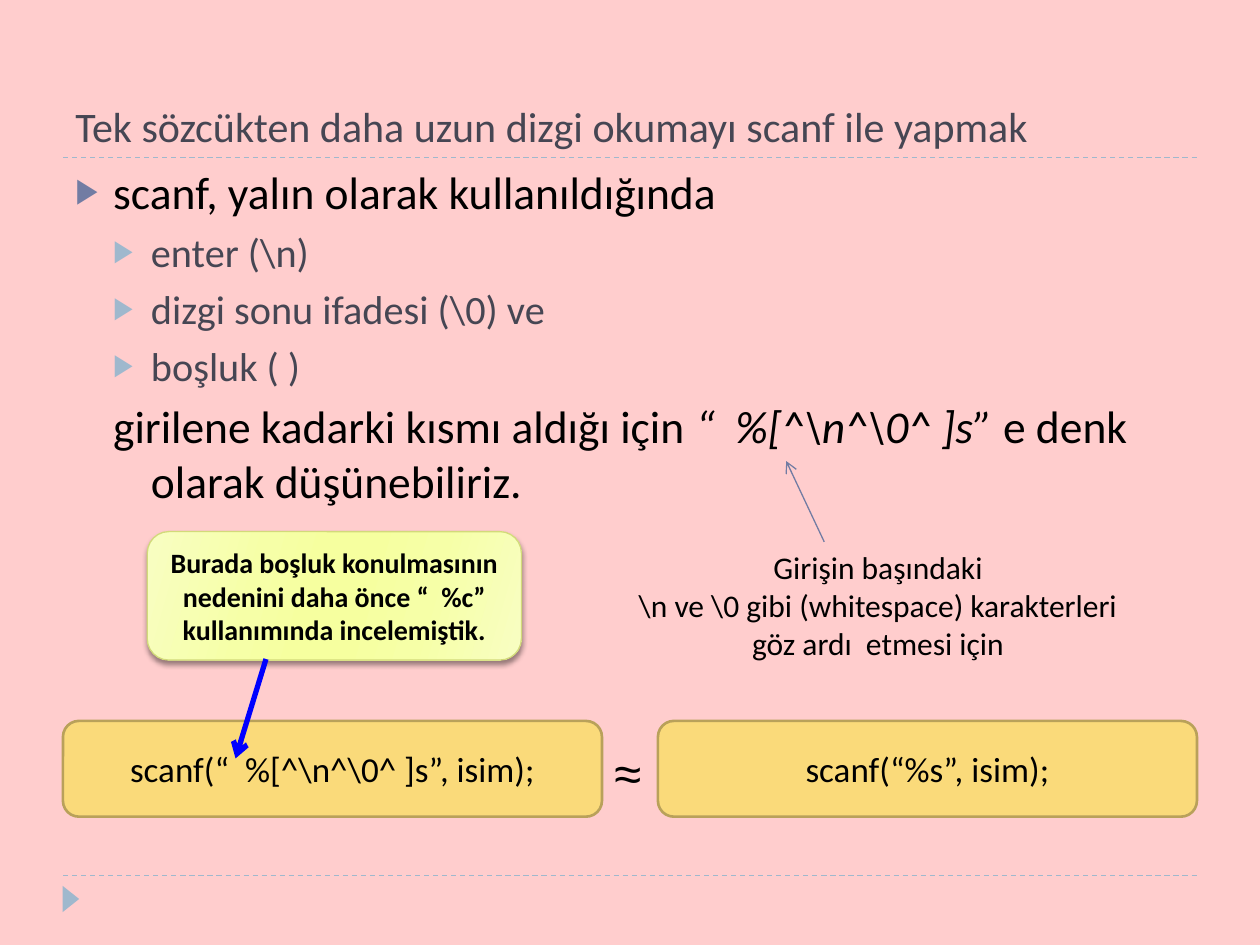
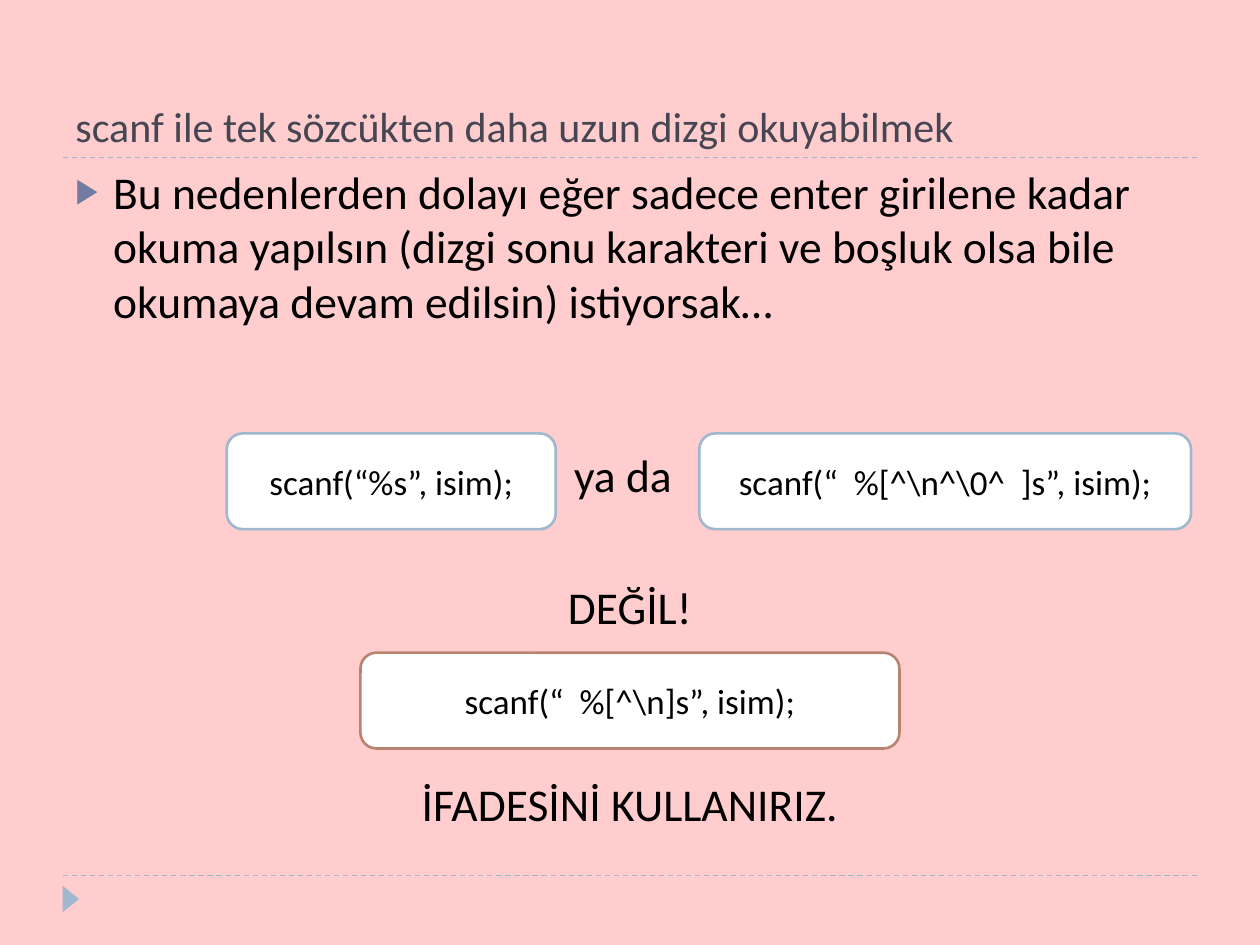
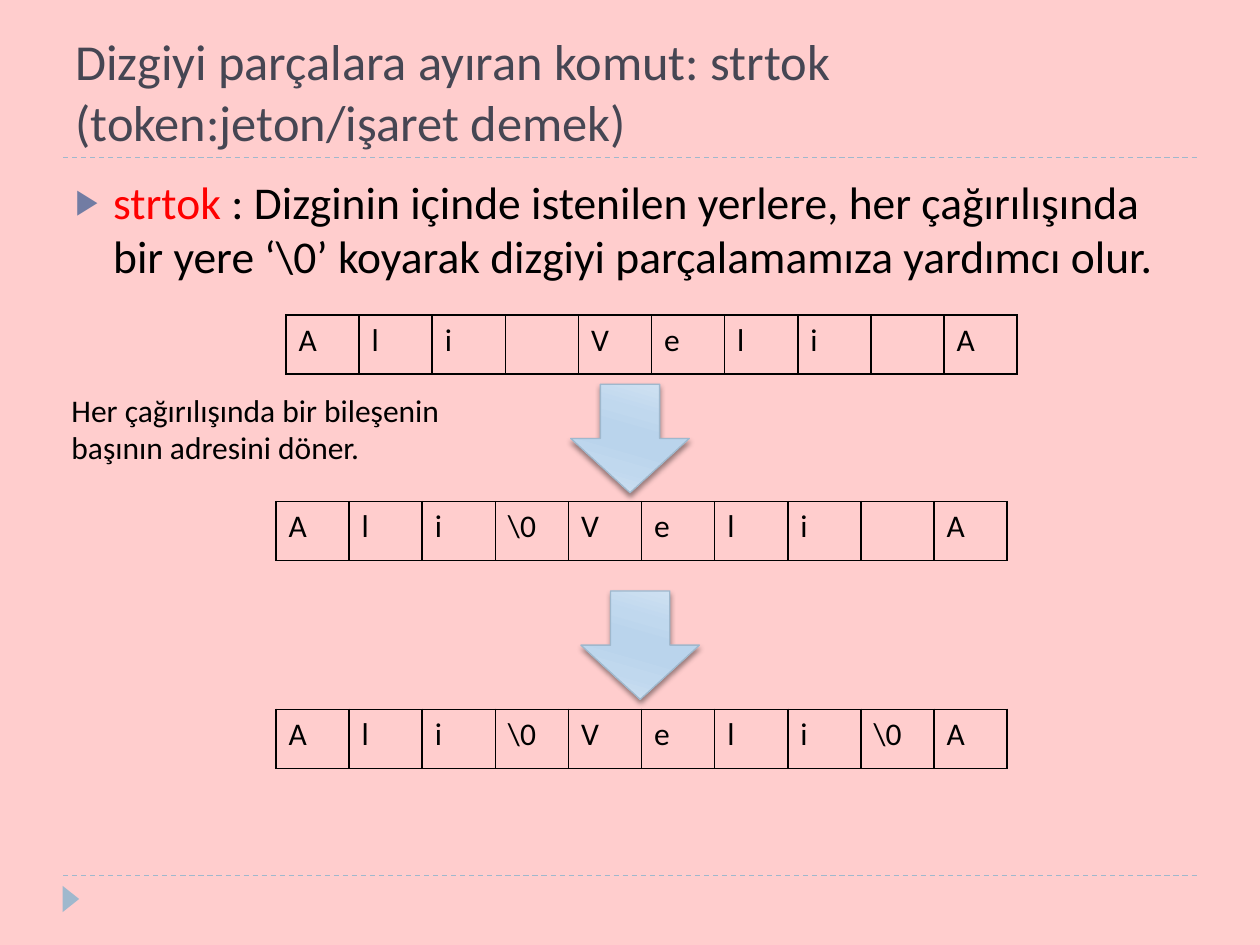
from dataclasses import dataclass

from lxml import etree
from pptx import Presentation, util as u
from pptx.dml.color import RGBColor
from pptx.enum import dml, shapes, text
from pptx.oxml.ns import qn

Pt = u.Pt
LEFT, MID = text.PP_ALIGN.LEFT, text.PP_ALIGN.CENTER
KIND = shapes.MSO_SHAPE


@dataclass(frozen=True)
class Theme:
    face: str = "Calibri"
    sign: str = "Arial"
    back: str = "FFCDCD"
    ink: str = "000000"
    grey: str = "464653"
    slate: str = "727CA3"
    sky: str = "9FB8CD"
    red: str = "FF0000"
    blue: str = "0000FF"
    white: str = "FFFFFF"
    gold: str = "FADA7A"
    rim: str = "B9A15A"
    clay: str = "B88472"
    lime: str = "D2DA7A"
    limes: tuple = ("F8FEC2", "F6FFA7", "F6FF9F")
    skies: tuple = ("D3E3F2", "C0D8EE", "BAD4EC")
    head: float = 24
    big: float = 28.8
    main: float = 26
    minor: float = 23
    code: float = 20
    note: float = 18
    small: float = 16
    equal: float = 28


T = Theme()

# Body lines: (style, runs); a run is text or (text, changes)
SCANF = [
    ("top", ["scanf, yalın olarak kullanıldığında"]),
    ("sub", ["enter (\\n)"]),
    ("sub", ["dizgi sonu ifadesi (\\0) ve"]),
    ("sub", ["boşluk ( )"]),
    ("rest", ["girilene kadarki kısmı aldığı için ",
              ("“  %[^\\n^\\0^ ]s” ", {"italic": True}),
              "e denk olarak düşünebiliriz."]),
]
ENTER = [("top", ["Bu nedenlerden dolayı eğer sadece enter girilene kadar okuma "
                  "yapılsın (dizgi sonu karakteri ve boşluk olsa bile okumaya "
                  "devam edilsin) istiyorsak…"])]
STRTOK = [("top", [("strtok ", {"color": T.red}),
                   ": Dizginin içinde istenilen yerlere, her çağırılışında bir "
                   "yere ‘\\0’ koyarak dizgiyi parçalamamıza yardımcı olur."])]
NOTE = ["Girişin başındaki", "\\n ve \\0 gibi (whitespace) karakterleri",
        "göz ardı  etmesi için"]
HINT = ("Burada boşluk konulmasının nedenini daha önce “  %c” "
        "kullanımında incelemiştik.")
RETURN = "Her çağırılışında bir bileşenin başının adresini döner."

# Code boxes: left, top, width, fill, line, text
EQUAL = [
    (36, 412, 308, T.gold, T.rim, "scanf(“  %[^\\n^\\0^ ]s”, isim);"),
    (376, 412, 308, T.gold, T.rim, "scanf(“%s”, isim);"),
]
CHOICE = [
    (399.6, 247.7, 281, T.white, T.sky, "scanf(“  %[^\\n^\\0^  ]s”, isim);"),
    (129.6, 247.7, 188, T.white, T.sky, "scanf(“%s”, isim);"),
    (206, 373, 308, T.white, T.clay, "scanf(“  %[^\\n]s”, isim);"),
]
# Phrases: centre, top, text
VERDICT = [(356, 252, "ya da"), (360, 327.5, "DEĞİL!"),
           (360, 440, "İFADESİNİ KULLANIRIZ.")]

# Strips: left, top, the two gaps between the words
WORDS = ("Ali", "Veli", "A")
STRIPS = [(163.4, 180, ("", "")), (157.7, 286.6, ("\\0", "")),
          (157.7, 405.4, ("\\0", "\\0"))]
ARROWS = [(329, 216.7), (334.8, 334.8)]

# Line styles: indent, space before, bullet colour, size, text colour
STYLES = {
    "top": (21.6, 6, T.slate, T.main, T.ink),
    "sub": (43.2, 5, T.sky, T.minor, T.grey),
    "rest": (43.2, 5, None, T.main, T.ink),
}


def rgb(hue):
    return RGBColor.from_string(hue)


def sub(node, tag, **attrs):
    return etree.SubElement(node, qn(tag), {k: str(v) for k, v in attrs.items()})


def place(box):
    return [Pt(n) for n in box]


def style(font, size, color=T.ink, face=T.face, bold=None):
    font.size, font.name, font.bold = Pt(size), face, bold
    font.color.rgb = rgb(color)


def write(frame, lines, size, align=LEFT, anchor=text.MSO_ANCHOR.TOP, **look):
    frame.word_wrap = True
    frame.vertical_anchor = anchor
    for i, line in enumerate(lines):
        para = frame.add_paragraph() if i else frame.paragraphs[0]
        para.text, para.alignment = line, align
        style(para.font, size, **look)


def label(slide, box, lines, size, **look):
    frame = slide.shapes.add_textbox(*place(box)).text_frame
    write(frame, lines, size, **look)


def body(slide, lines, top=90):
    frame = slide.shapes.add_textbox(*place((36, top, 648, 389))).text_frame
    frame.word_wrap = True
    for i, (name, runs) in enumerate(lines):
        para = frame.add_paragraph() if i else frame.paragraphs[0]
        indent, space, mark, size, color = STYLES[name]
        props = para._p.get_or_add_pPr()
        props.set("marL", str(Pt(indent)))
        props.set("indent", str(-Pt(21.6)))
        if mark:
            sub(sub(props, "a:buClr"), "a:srgbClr", val=mark)
            sub(props, "a:buSzPct", val=76000)
            sub(props, "a:buFont", typeface=T.sign)
            sub(props, "a:buChar", char="▶")
        else:
            sub(props, "a:buNone")
        para.space_before = Pt(space)
        style(para.font, size, color)
        for part in runs:
            words, change = (part, {}) if isinstance(part, str) else part
            run = para.add_run()
            run.text = words
            if "italic" in change:
                run.font.italic = True
            if "color" in change:
                run.font.color.rgb = rgb(change["color"])


def shape(slide, kind, box, fill, edge=None, width=0.75, turn=0):
    form = slide.shapes.add_shape(kind, *place(box))
    form.shadow.inherit = False
    form.rotation = turn
    if isinstance(fill, tuple):
        glow(form, fill)
    else:
        form.fill.solid()
        form.fill.fore_color.rgb = rgb(fill)
    if edge:
        form.line.color.rgb = rgb(edge)
        form.line.width = Pt(width)
    else:
        form.line.fill.background()
    return form


def glow(form, hues):
    """Give a mirrored gradient and a soft shadow below."""
    form.fill.gradient()
    form.fill.gradient_angle = 344
    props = form._element.spPr
    stops = props.find(".//" + qn("a:gsLst"))
    for stop in list(stops):
        stops.remove(stop)
    for spot, hue in zip((0, 30, 45, 55, 73, 100), hues + hues[::-1]):
        sub(sub(stops, "a:gs", pos=spot * 1000), "a:srgbClr", val=hue)
    cast = sub(props.find(qn("a:effectLst")), "a:outerShdw", blurRad=Pt(3),
               dist=Pt(2), dir=5400000, rotWithShape=0)
    sub(sub(cast, "a:srgbClr", val=T.ink), "a:alpha", val=40000)


def line(slide, ends, color, width=0.75, dash=False, arrow=False):
    link = slide.shapes.add_connector(shapes.MSO_CONNECTOR.STRAIGHT, *place(ends))
    link.line.color.rgb = rgb(color)
    link.line.width = Pt(width)
    if dash:
        link.line.dash_style = dml.MSO_LINE.DASH
    if arrow:
        sub(link.line._get_or_add_ln(), "a:tailEnd", type="arrow")
    sub(link._element.spPr, "a:effectLst")


def codes(slide, items):
    for left, top, width, fill, edge, words in items:
        form = shape(slide, KIND.ROUNDED_RECTANGLE, (left, top, width, 54.7),
                     fill, edge, 1.5)
        write(form.text_frame, [words], T.code, MID, text.MSO_ANCHOR.MIDDLE)


def strip(slide, left, top, gaps):
    """Draw the words letter by letter in one row of cells."""
    cells = [*WORDS[0], gaps[0], *WORDS[1], gaps[1], *WORDS[2]]
    box = place((left, top, 41.8 * len(cells), 33.8))
    grid = slide.shapes.add_table(1, len(cells), *box).table
    grid.first_row = grid.horz_banding = False
    for cell, words in zip(grid.iter_cells(), cells):
        props = cell._tc.get_or_add_tcPr()
        for side in "LRTB":
            edge = sub(props, "a:ln" + side, w=Pt(1))
            sub(sub(edge, "a:solidFill"), "a:srgbClr", val=T.ink)
        cell.fill.background()
        para = cell.text_frame.paragraphs[0]
        para.text = words
        style(para.font, T.note)


def start(deck, title, size=T.head):
    slide = deck.slides.add_slide(deck.slide_layouts[6])
    slide.background.fill.solid()
    slide.background.fill.fore_color.rgb = rgb(T.back)
    for y in (500.4, 90):
        line(slide, (36, y, 684, y), T.sky, dash=True)
    shape(slide, KIND.ISOSCELES_TRIANGLE, (33, 509, 15, 9.4), T.sky, turn=90)
    label(slide, (36, 12, 648, 78), [title], size, color=T.grey,
          anchor=text.MSO_ANCHOR.BOTTOM)
    return slide


def main():
    deck = Presentation()
    deck.slide_width, deck.slide_height = Pt(720), Pt(540)

    slide = start(deck, "Tek sözcükten daha uzun dizgi okumayı scanf ile yapmak")
    body(slide, SCANF)
    codes(slide, EQUAL)
    line(slide, (471, 309.6, 449.3, 263.5), T.slate, arrow=True)
    label(slide, (344, 309.6, 315.4, 72.7), NOTE, T.note, align=MID)
    label(slide, (344, 420.5, 30.5, 41), ["≈"], T.equal, face=T.sign)
    hint = shape(slide, KIND.ROUNDED_RECTANGLE, (84.2, 303.8, 213.8, 73.4),
                 T.limes, T.lime)
    write(hint.text_frame, [HINT], T.small, MID, text.MSO_ANCHOR.MIDDLE, bold=True)
    line(slide, (152, 376.6, 134.6, 433.4), T.blue, 3, arrow=True)

    slide = start(deck, "scanf ile tek sözcükten daha uzun dizgi okuyabilmek")
    body(slide, ENTER)
    for centre, top, words in VERDICT:
        wide = 76 if words == VERDICT[0][2] else 400
        label(slide, (centre - wide / 2, top, wide, 39), [words], T.main, align=MID)
    codes(slide, CHOICE)

    slide = start(deck, "Dizgiyi parçalara ayıran komut: strtok "
                        "(token:jeton/işaret demek)", T.big)
    body(slide, STRTOK, 95.8)
    for item in STRIPS:
        strip(slide, *item)
    for left, top in ARROWS:
        shape(slide, KIND.RIGHT_ARROW, (left, top, 62, 67.7), T.skies, T.sky, turn=90)
    label(slide, (33.8, 219.6, 275.8, 51), [RETURN], T.note)

    deck.save("out.pptx")


if __name__ == "__main__":
    main()
